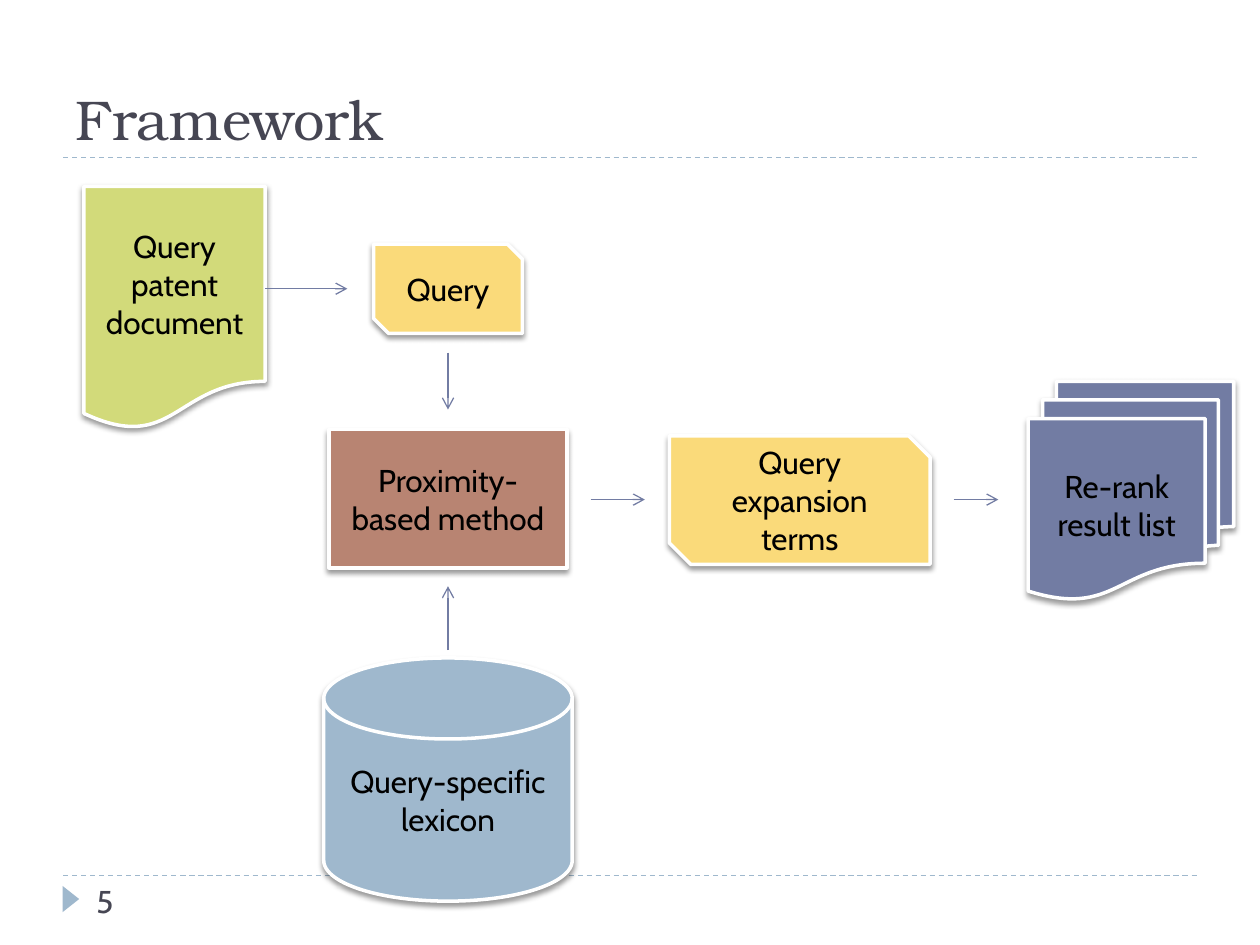
"""Build the slide that shows the query expansion framework."""
from dataclasses import dataclass

from lxml import etree
from pptx import Presentation
from pptx.dml.color import RGBColor
from pptx.enum.dml import MSO_LINE
from pptx.enum.shapes import MSO_CONNECTOR, MSO_SHAPE
from pptx.enum.text import MSO_ANCHOR, PP_ALIGN
from pptx.oxml.ns import qn
from pptx.util import Pt

STRAIGHT = MSO_CONNECTOR.STRAIGHT
DASH = MSO_LINE.DASH
TRIANGLE = MSO_SHAPE.ISOSCELES_TRIANGLE
DOCUMENT = MSO_SHAPE.FLOWCHART_DOCUMENT
DOCUMENTS = MSO_SHAPE.FLOWCHART_MULTIDOCUMENT
PROCESS = MSO_SHAPE.FLOWCHART_PROCESS
DISK = MSO_SHAPE.FLOWCHART_MAGNETIC_DISK
SNIPPED = MSO_SHAPE.SNIP_2_DIAG_RECTANGLE
TOP, MIDDLE, BOTTOM = MSO_ANCHOR.TOP, MSO_ANCHOR.MIDDLE, MSO_ANCHOR.BOTTOM
LEFT, CENTER = PP_ALIGN.LEFT, PP_ALIGN.CENTER


@dataclass(frozen=True)
class Theme:
    heading_font: str = "TeX Gyre Bonum"
    body_font: str = "Cabin"
    title_size: float = 32
    body_size: float = 18
    thin: float = 0.75
    outline: float = 2
    heading: str = "464653"
    text: str = "000000"
    white: str = "FFFFFF"
    blue: str = "9FB8CD"
    indigo: str = "727CA3"
    green: str = "D2DA7A"
    yellow: str = "FADA7A"
    brown: str = "B88472"


class SlideBuilder:
    def __init__(self, slide, theme):
        self.slide = slide
        self.theme = theme

    def add_text(self, shape, lines, anchor, alignment, **format_values):
        frame = shape.text_frame
        frame.word_wrap = True
        frame.vertical_anchor = anchor
        values = {"name": self.theme.body_font, "size": Pt(self.theme.body_size)}
        values.update(format_values)
        color = values.pop("color")
        for index, line in enumerate(lines):
            paragraph = frame.add_paragraph() if index else frame.paragraphs[0]
            paragraph.alignment = alignment
            run = paragraph.add_run()
            run.text = line
            run.font.color.rgb = RGBColor.from_string(color)
            for name, value in values.items():
                setattr(run.font, name, value)

    def label(self, box, text, anchor, **format_values):
        shape = self.slide.shapes.add_textbox(*map(Pt, box))
        self.add_text(shape, [text], anchor, LEFT, color=self.theme.heading, **format_values)

    def shape(self, kind, box, color):
        shape = self.slide.shapes.add_shape(kind, *map(Pt, box))
        shape.shadow.inherit = False
        shape.fill.solid()
        shape.fill.fore_color.rgb = RGBColor.from_string(color)
        shape.line.fill.background()
        return shape

    def node(self, kind, box, color, lines):
        shape = self.shape(kind, box, color)
        shape.line.color.rgb = RGBColor.from_string(self.theme.white)
        shape.line.width = Pt(self.theme.outline)
        self.drop_shadow(shape)
        self.add_text(shape, lines, MIDDLE, CENTER, color=self.theme.text)

    def drop_shadow(self, shape):
        effects = shape._element.spPr.find(qn("a:effectLst"))
        shadow = etree.SubElement(
            effects, qn("a:outerShdw"), blurRad=str(Pt(3)), dist=str(Pt(2)),
            dir="5400000", rotWithShape="0")
        color = etree.SubElement(shadow, qn("a:srgbClr"), val=self.theme.text)
        etree.SubElement(color, qn("a:alpha"), val="40000")

    def line(self, start, end, color):
        connector = self.slide.shapes.add_connector(STRAIGHT, *map(Pt, start + end))
        connector.line.color.rgb = RGBColor.from_string(color)
        connector.line.width = Pt(self.theme.thin)
        etree.SubElement(connector._element.spPr, qn("a:effectLst"))
        return connector

    def rule(self, top):
        self.line((36, top), (684, top), self.theme.blue).line.dash_style = DASH

    def arrow(self, start, end):
        connector = self.line(start, end, self.theme.indigo)
        outline = connector._element.spPr.find(qn("a:ln"))
        etree.SubElement(outline, qn("a:tailEnd"), type="arrow")


def main():
    presentation = Presentation()
    presentation.slide_width, presentation.slide_height = Pt(720), Pt(540)
    theme = Theme()
    builder = SlideBuilder(
        presentation.slides.add_slide(presentation.slide_layouts[6]), theme)

    for top in (500.5, 90):
        builder.rule(top)
    builder.shape(TRIANGLE, (33, 509, 15, 9.5), theme.blue).rotation = 90
    builder.label((36, 12, 648, 78), "Framework", BOTTOM,
                  name=theme.heading_font, size=Pt(theme.title_size))
    builder.label((48, 500.5, 156, 29), "5", TOP)

    nodes = [
        (DOCUMENT, (48, 106.5, 103.5, 139), theme.green, ["Query", "patent document"]),
        (SNIPPED, (213.5, 139.5, 85, 51), theme.yellow, ["Query"]),
        (DISK, (185, 376, 142, 139), theme.blue, ["Query-specific lexicon"]),
        (PROCESS, (188, 245.5, 136, 79), theme.brown, ["Proximity-based method"]),
        (SNIPPED, (382.5, 249, 149, 73.5), theme.yellow, ["Query expansion", "terms"]),
        (DOCUMENTS, (587.5, 218, 117.5, 124.5), theme.indigo, ["Re-rank result list"]),
    ]
    for node in nodes:
        builder.node(*node)

    arrows = [
        ((151.5, 165), (198.5, 165)),
        ((337.5, 285.5), (368.5, 285.5)),
        ((545, 285.5), (570.5, 285.5)),
        ((256, 201.5), (256, 234)),
        ((256, 371.5), (256, 335)),
    ]
    for start, end in arrows:
        builder.arrow(start, end)

    presentation.save("out.pptx")


if __name__ == "__main__":
    main()
